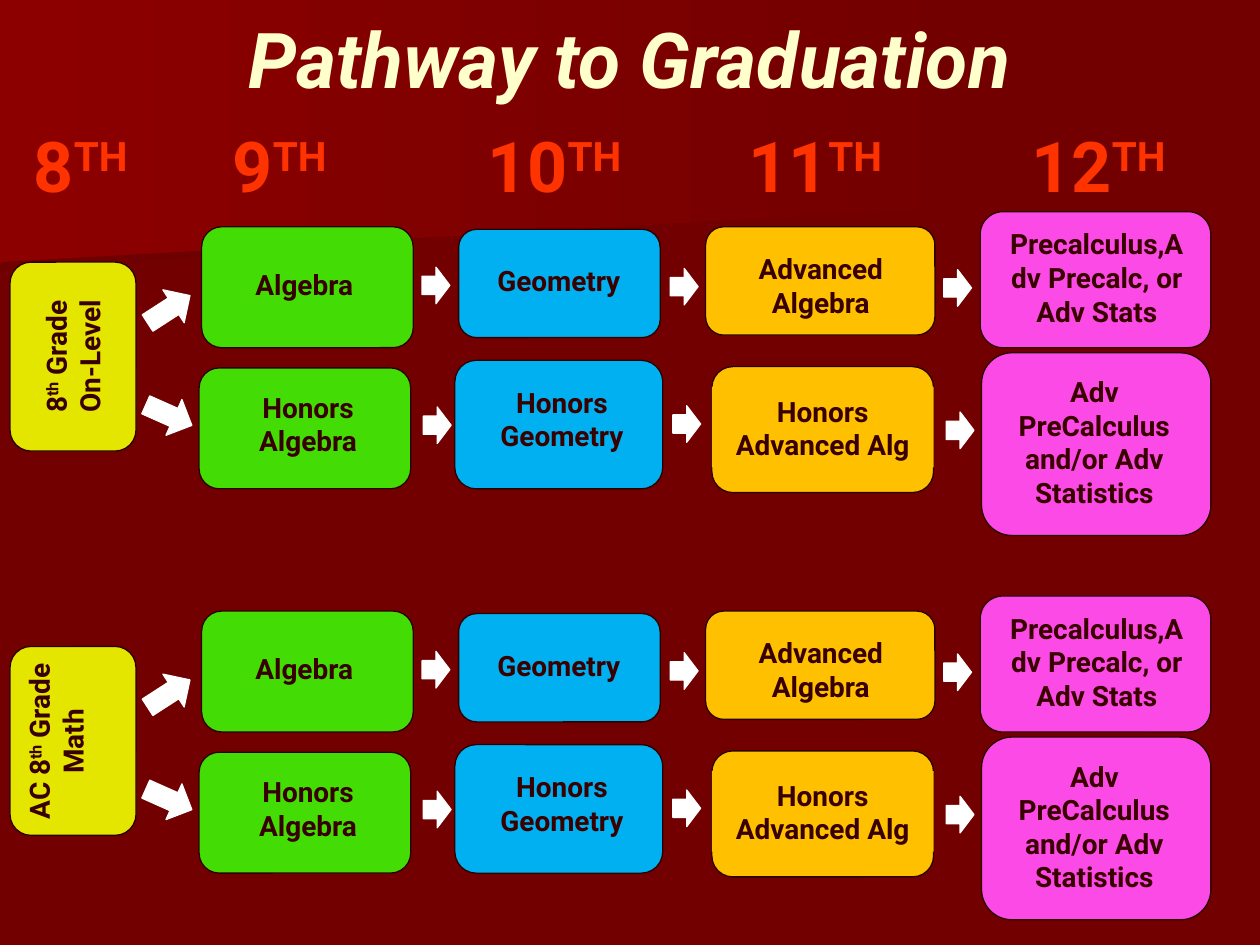
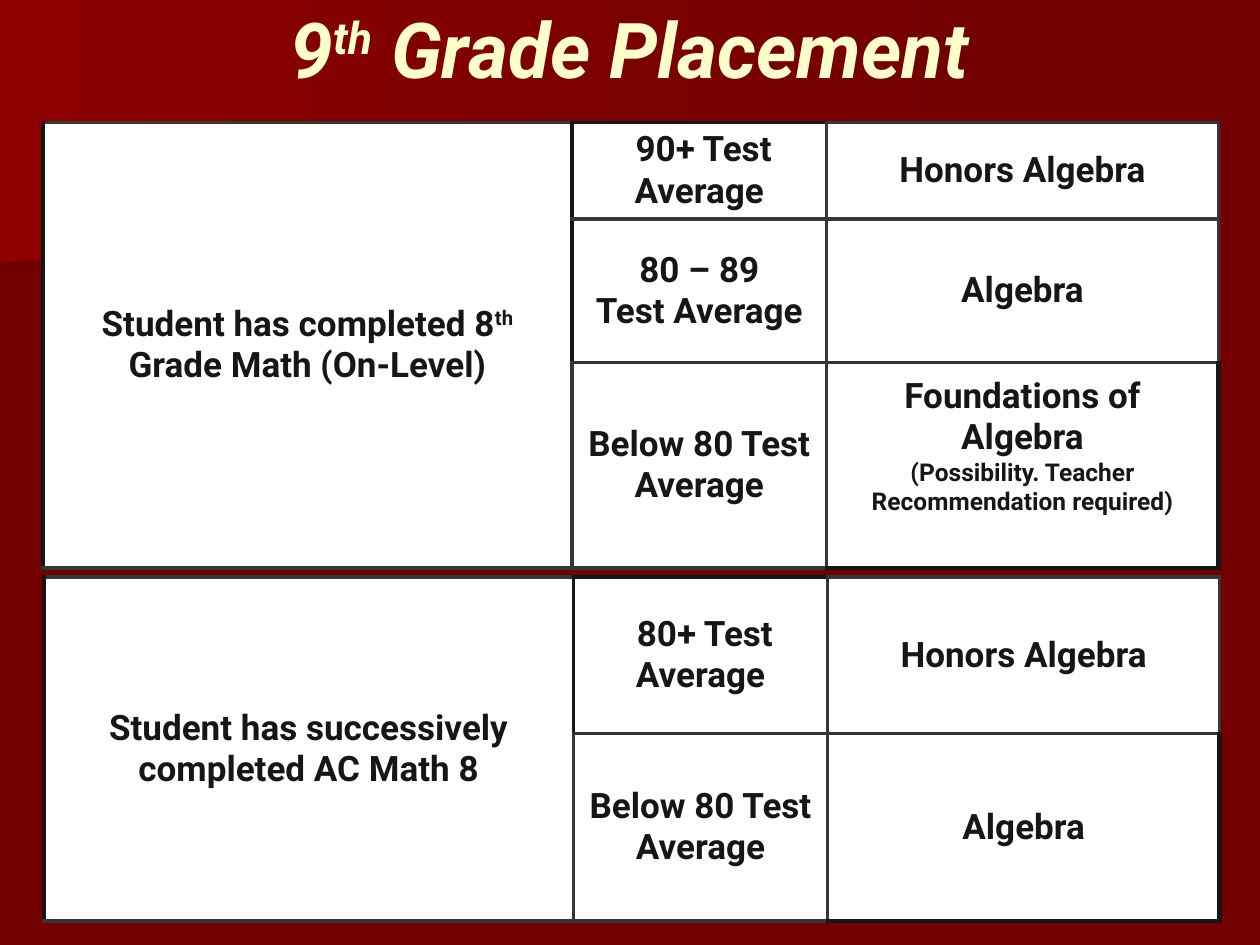
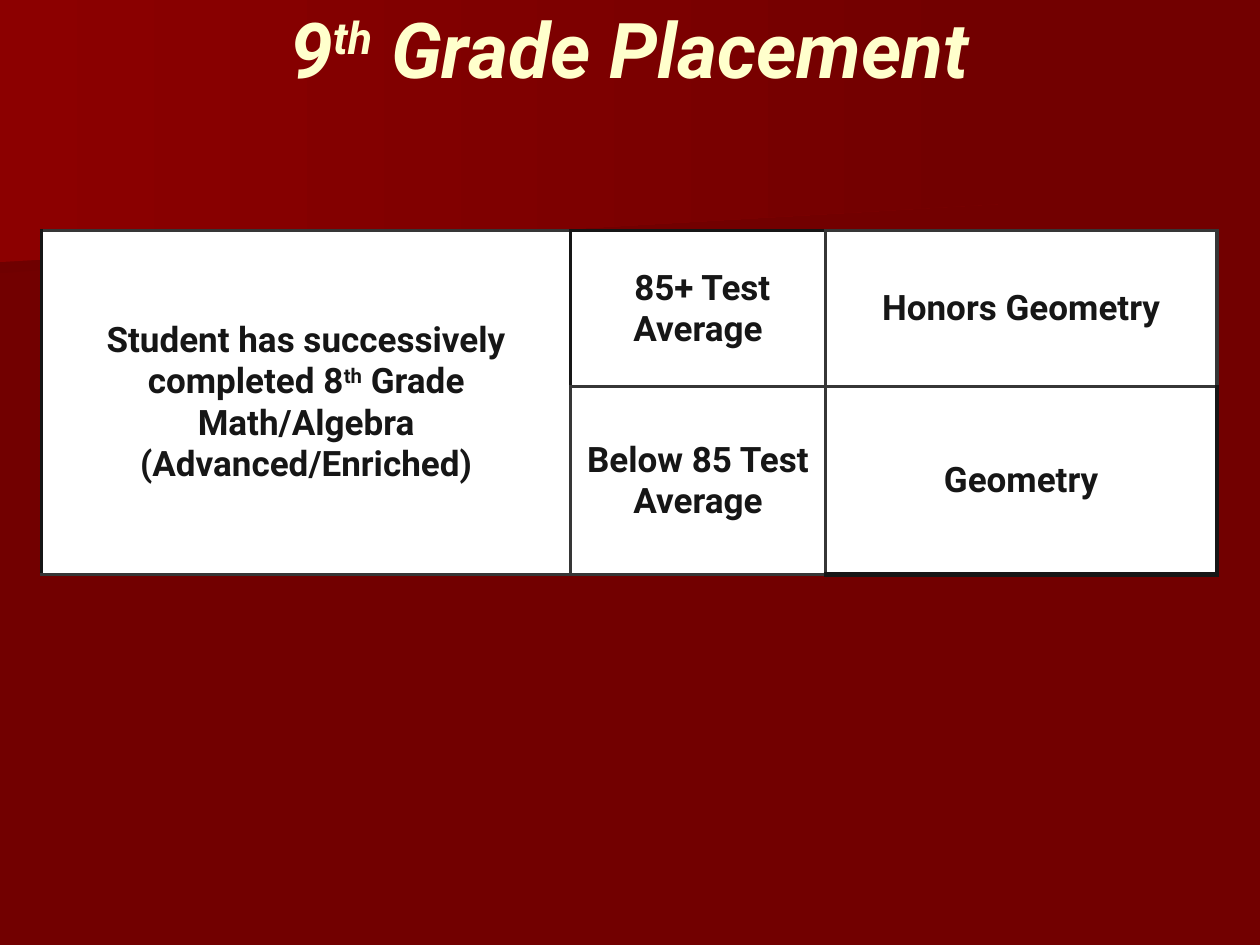
import pptx
import pptx.util
import pptx.dml.color
import pptx.enum.shapes
import pptx.enum.text
import pptx.oxml
import pptx.oxml.ns

Inches, Pt = pptx.util.Inches, pptx.util.Pt
SHAPE = pptx.enum.shapes.MSO_SHAPE
ANCHOR = pptx.enum.text.MSO_ANCHOR
ALIGN = pptx.enum.text.PP_ALIGN

# Shared look
FONT = "Roboto"
BASE, WHITE, CREAM, ORANGE = "720000", "FFFFFF", "FFFFCC", "FF3300"
OUTLINE, CARD_TEXT = "2A0200", "390000"
INK, GRID = "161616", "363636"
YELLOW, GREEN, BLUE, GOLD, PINK = "E5E600", "43DD05", "00B0F0", "FFC000", "FC4AE7"
BANDS = [  # start colour, outline
    ("6F0000", [(7.78, 1.53), (0, 2.17), (0, 1.01), (7.79, 1.01), (7.78, 1.28)]),
    ("8C0000", [(7.92, 1.62), (0, 2.08), (0, 0), (7.92, 0)]),
]

# Pathway content; text between ^ marks is superscript
GRADES = [("8", 0.06, 1.24), ("9", 1.64, 1.24), ("10", 3.64, 1.6),
          ("11", 5.71, 1.6), ("12", 7.96, 1.6)]
COURSES = [  # text, colour, card box, label box
    ("Geometry", BLUE, (3.64, 1.82, 1.6, 0.86), (3.73, 1.91, 1.41, 0.5)),
    ("Honors Geometry", BLUE, (3.61, 2.86, 1.65, 1.02), (3.77, 3, 1.38, 0.64)),
    ("Advanced Algebra", GOLD, (5.6, 1.8, 1.82, 0.86), (5.75, 1.94, 1.53, 0.64)),
    ("Honors Advanced Alg", GOLD, (5.65, 2.91, 1.76, 1), (5.65, 3.07, 1.76, 0.64)),
    ("Precalculus,Adv Precalc, or Adv Stats", PINK,
     (7.78, 1.68, 1.83, 1.08), (7.86, 1.74, 1.69, 0.91)),
    ("Adv PreCalculus and/or Adv Statistics", PINK,
     (7.79, 2.8, 1.82, 1.45), (7.84, 2.91, 1.69, 1.18)),
    ("Algebra", GREEN, (1.6, 1.8, 1.68, 0.96), (1.71, 2.07, 1.41, 0.37)),
    ("Honors Algebra", GREEN, (1.58, 2.92, 1.68, 0.96), (1.74, 3.04, 1.41, 0.64)),
]
STEP_ARROWS = [(3.35, 2.12), (5.32, 2.13), (7.49, 2.14),
               (3.36, 3.23), (5.34, 3.22), (7.51, 3.27)]
FORK_ARROWS = [(2.3, 327.1), (3.14, 24)]  # top, rotation
TRACKS = [  # starting grade, label top, label height
    ("8^th^ Grade On-Level", 2.51, 0.64),
    ("AC 8^th^ Grade Math", 2.38, 0.91),
]
TRACK_GAP = 3.05

# Placement content: position, row heights, student, (score, course) rows
PLACEMENT = "9^th^ Grade Placement"
AC_TABLE = ((0.35, 4.58), [1.24, 1.49],
            "Student has successively completed AC Math 8",
            [([" 80+ Test Average"], ["Honors Algebra"]),
             (["Below 80 Test Average"], ["Algebra"])])
ON_LEVEL_TABLE = ((0.34, 0.97), [0.75, 1.14, 1.63],
                  "Student has completed 8^th^ Grade Math (On-Level)",
                  [([" 90+ Test Average"], ["Honors Algebra"]),
                   (["80 – 89", "Test Average"], ["Algebra"]),
                   (["Below 80 Test Average"],
                    ["Foundations of Algebra",
                     "(Possibility. Teacher Recommendation required)"])])
ENRICHED_TABLE = ((0.33, 1.83), [1.24, 1.49],
                  "Student has successively completed 8^th^ Grade Math/Algebra "
                  "(Advanced/Enriched)",
                  [([" 85+ Test Average"], ["Honors Geometry"]),
                   (["Below 85 Test Average"], ["Geometry"])])
COLUMNS = [4.2, 2.02, 3.11]


def rgb(value):
    return pptx.dml.color.RGBColor.from_string(value)


def box(left, top, width, height):
    return [Inches(v) for v in (left, top, width, height)]


def write(p, text, size, color, italic=False):
    """Fill a centred bold paragraph, raising the parts between ^ marks."""
    p.alignment = ALIGN.CENTER
    p.font.name, p.font.size, p.font.bold = FONT, Pt(size), True
    p.font.italic = italic
    p.font.color.rgb = rgb(color)
    for i, part in enumerate(text.split("^")):
        if part:
            r = p.add_run()
            r.text = part
            if i % 2:
                r._r.get_or_add_rPr().set("baseline", "30000")


def add_text(s, at, text, size, color, anchor=ANCHOR.TOP, wrap=True, italic=False):
    sp = s.shapes.add_textbox(*box(*at))
    tf = sp.text_frame
    tf.word_wrap, tf.vertical_anchor = wrap, anchor
    write(tf.paragraphs[0], text, size, color, italic)
    return sp


def add_shape(s, kind, at, fill, line=None, rotation=0):
    sp = s.shapes.add_shape(kind, *box(*at))
    sp.shadow.inherit = False
    sp.rotation = rotation
    sp.fill.solid()
    sp.fill.fore_color.rgb = rgb(fill)
    if line:
        sp.line.color.rgb = rgb(line)
        sp.line.width = Pt(0.75)
    else:
        sp.line.fill.background()
    return sp


def add_slide(prs, title, top):
    s = prs.slides.add_slide(prs.slide_layouts[6])
    s.background.fill.solid()
    s.background.fill.fore_color.rgb = rgb(BASE)
    for start, outline in BANDS:
        points = [(Inches(x), Inches(y)) for x, y in outline]
        builder = s.shapes.build_freeform(*points[0])
        builder.add_line_segments(points[1:], close=True)
        sp = builder.convert_to_shape()
        sp.shadow.inherit = False
        sp.line.fill.background()
        sp.fill.gradient()
        sp.fill.gradient_angle = 0
        for stop, color in zip(sp.fill.gradient_stops, (start, BASE)):
            stop.color.rgb = rgb(color)
    add_text(s, (0.5, top, 9, 1.25), title, 44, CREAM, ANCHOR.MIDDLE, italic=True)
    return s


def add_track(s, grade, label_top, label_height, dy):
    """Draw one starting grade with its two rows of courses."""
    add_shape(s, SHAPE.ROUNDED_RECTANGLE, (-0.17, 2.33 + dy, 1.5, 1),
              YELLOW, OUTLINE, 270)
    sp = add_text(s, (-0.17, label_top + dy, 1.5, label_height), grade, 16, CARD_TEXT)
    sp.rotation = 270
    for text, color, card, label in COURSES:
        for kind, (x, y, w, h), line in ((SHAPE.ROUNDED_RECTANGLE, card, OUTLINE),
                                         (SHAPE.RECTANGLE, label, None)):
            sp = add_shape(s, kind, (x, y + dy, w, h), color, line)
        tf = sp.text_frame
        tf.word_wrap, tf.vertical_anchor = True, ANCHOR.BOTTOM
        write(tf.paragraphs[0], text, 16, CARD_TEXT)
    for x, y in STEP_ARROWS:
        add_shape(s, SHAPE.RIGHT_ARROW, (x, y + dy, 0.22, 0.29), WHITE, WHITE)
    for y, turn in FORK_ARROWS:
        add_shape(s, SHAPE.RIGHT_ARROW, (1.14, y + dy, 0.4, 0.31), WHITE, WHITE, turn)


def style_cell(cell, dark, width):
    """Draw the four borders, the sides named in dark in ink, then the fill."""
    tcPr = cell._tc.get_or_add_tcPr()
    for side in "LRTB":
        color, weight = (INK, width) if side in dark else (GRID, 2.25)
        tcPr.append(pptx.oxml.parse_xml(
            f'<a:ln{side} {pptx.oxml.ns.nsdecls("a")} w="{int(Pt(weight))}">'
            f'<a:solidFill><a:srgbClr val="{color}"/></a:solidFill></a:ln{side}>'))
    cell.fill.solid()
    cell.fill.fore_color.rgb = rgb(WHITE)
    cell.vertical_anchor = ANCHOR.MIDDLE


def add_placement(s, position, heights, student, rows):
    last = len(rows) - 1
    table = s.shapes.add_table(len(rows), len(COLUMNS), *box(
        *position, sum(COLUMNS), sum(heights))).table
    table.first_row = table.horz_banding = False
    for column, width in zip(table.columns, COLUMNS):
        column.width = Inches(width)
    for row, height in zip(table.rows, heights):
        row.height = Inches(height)
    table.cell(0, 0).merge(table.cell(last, 0))
    write(table.cell(0, 0).text_frame.paragraphs[0], student, 20, INK)
    for i, texts in enumerate(rows):
        score_dark = "LT" if i == 0 else "L" if i < last else ""
        style_cell(table.cell(i, 0), "LR", 2.25)
        style_cell(table.cell(i, 1), score_dark, 2.25)
        style_cell(table.cell(i, 2), "RB" if i == last else "", 3)
        for j, lines in enumerate(texts, 1):
            cell = table.cell(i, j)
            tf = cell.text_frame
            for n, line in enumerate(lines):
                p = tf.add_paragraph() if n else tf.paragraphs[0]
                note = line.startswith("(")
                write(p, line, 14 if note else 20, INK)
                if note:
                    cell.margin_bottom = Inches(0.35)


def main():
    prs = pptx.Presentation()
    prs.slide_width, prs.slide_height = Inches(10), Inches(7.5)

    # Pathway
    s = add_slide(prs, "Pathway to Graduation", -0.17)
    for number, left, width in GRADES:
        add_text(s, (left, 0.92, width, 0.77), number + "^TH ^", 40, ORANGE, wrap=False)
    for i, track in enumerate(TRACKS):
        add_track(s, *track, i * TRACK_GAP)

    # Placement
    for tables in ([AC_TABLE, ON_LEVEL_TABLE], [ENRICHED_TABLE]):
        s = add_slide(prs, PLACEMENT, -0.25)
        for table in tables:
            add_placement(s, *table)

    prs.save("out.pptx")


if __name__ == "__main__":
    main()
